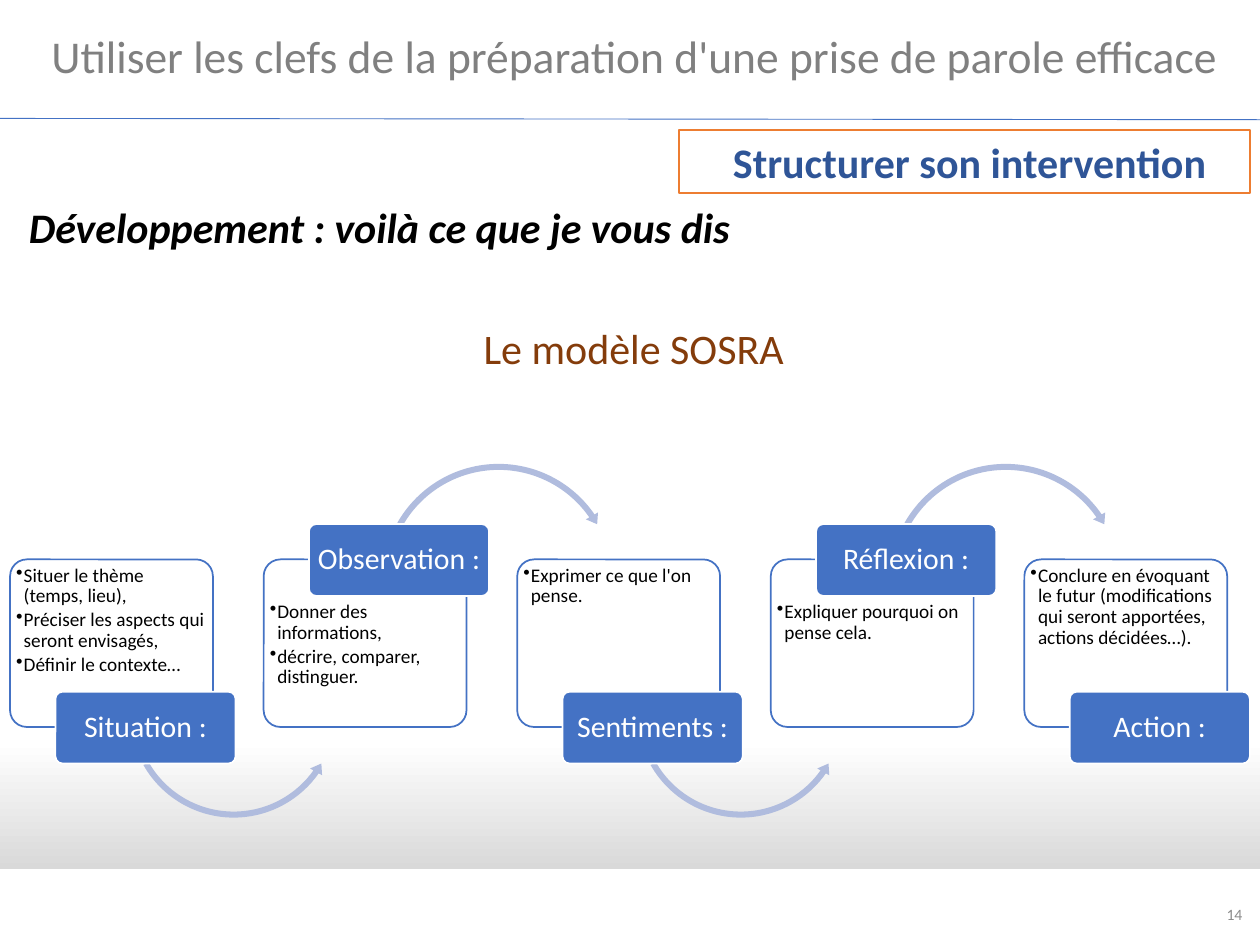
from lxml import etree
from pptx import Presentation
from pptx.dml.color import RGBColor
from pptx.enum.shapes import MSO_CONNECTOR, MSO_SHAPE
from pptx.enum.text import MSO_ANCHOR, MSO_AUTO_SIZE, PP_ALIGN
from pptx.oxml.ns import qn
from pptx.util import Inches, Pt

RECTANGLE, ROUNDED = MSO_SHAPE.RECTANGLE, MSO_SHAPE.ROUNDED_RECTANGLE
ARC_OVER, ARC_UNDER = MSO_SHAPE.CIRCULAR_ARROW, MSO_SHAPE.LEFT_CIRCULAR_ARROW
STRAIGHT = MSO_CONNECTOR.STRAIGHT
TOP, MIDDLE = MSO_ANCHOR.TOP, MSO_ANCHOR.MIDDLE
LEFT, CENTER, RIGHT = PP_ALIGN.LEFT, PP_ALIGN.CENTER, PP_ALIGN.RIGHT
NO_AUTOFIT = MSO_AUTO_SIZE.NONE

STEPS = [
    ("Situation :", ["Situer le thème (temps, lieu),",
                     "Préciser les aspects qui seront envisagés,",
                     "Définir le contexte…"]),
    ("Observation :", ["Donner des informations,", "décrire, comparer, distinguer."]),
    ("Sentiments :", ["Exprimer ce que l'on pense."]),
    ("Réflexion :", ["Expliquer pourquoi on pense cela."]),
    ("Action :", ["Conclure en évoquant le futur (modifications qui seront "
                  "apportées, actions décidées…)."]),
]
FIRST_LEFT, LAST_LEFT = 0.08, 8.13
PITCH = (LAST_LEFT - FIRST_LEFT) / (len(STEPS) - 1)


def color(value):
    return RGBColor.from_string(value)


def place(shape, left, top, width, height):
    shape.left, shape.top = Inches(left), Inches(top)
    shape.width, shape.height = Inches(width), Inches(height)


def set_bullet(para, mark=None, indent=0):
    properties = para._p.get_or_add_pPr()
    properties.set("marL", str(Inches(indent)))
    properties.set("indent", str(-Inches(indent)))
    if mark:
        etree.SubElement(properties, qn("a:buChar")).set("char", mark)
    else:
        etree.SubElement(properties, qn("a:buNone"))


def write(para, text, size=24, ink="000000", bold=False, italic=False, align=LEFT,
          before=0, after=0, spacing=1.0, mark=None, indent=0):
    set_bullet(para, mark, indent)
    para.alignment = align
    para.space_before, para.space_after = Pt(before), Pt(after)
    para.line_spacing = spacing
    span = para.add_run()
    span.text = text
    font = span.font
    font.name, font.size = "Calibri", Pt(size)
    font.bold, font.italic = bold, italic
    font.color.rgb = color(ink)


class SlideBuilder:
    blue, arc_blue, orange = "4472C4", "B0BCDE", "ED7D31"
    dark_blue, brown, gray, light_gray = "2F5597", "843C0B", "808080", "8C8C8C"
    white, shade = "FFFFFF", "D9D9D9"

    def __init__(self, page):
        self.page = page

    def frame(self, shape, anchor=TOP, insets=(0.1, 0.05, 0.1, 0.05)):
        frame = shape.text_frame
        frame.word_wrap = True
        frame.auto_size = NO_AUTOFIT
        frame.vertical_anchor = anchor
        (frame.margin_left, frame.margin_top,
         frame.margin_right, frame.margin_bottom) = map(Inches, insets)
        return frame

    def shape(self, kind, left, top, width, height, fill=None, line=None, adjust=()):
        shape = self.page.shapes.add_shape(
            kind, Inches(left), Inches(top), Inches(width), Inches(height))
        shape.shadow.inherit = False
        if fill:
            shape.fill.solid()
            shape.fill.fore_color.rgb = color(fill)
        if line:
            shape.line.color.rgb = color(line)
            shape.line.width = Pt(1)
        else:
            shape.line.fill.background()
        for index, value in enumerate(adjust):
            shape.adjustments[index] = value
        return shape

    def band(self, left, top, width, height):
        fill = self.shape(RECTANGLE, left, top, width, height).fill
        fill.gradient()
        fill.gradient_angle = 270
        stops = ((0.61, self.white), (1, self.shade))
        for stop, (position, tint) in zip(fill.gradient_stops, stops):
            stop.position = position
            stop.color.rgb = color(tint)

    def title(self, text):
        title = self.page.shapes.title
        place(title, 0.08, 0.17, 9.92, 0.54)
        write(self.frame(title, MIDDLE).paragraphs[0], text, size=26,
              ink=self.gray, align=CENTER)

    def body(self, heading, model):
        body = self.page.placeholders[1]
        place(body, 0.13, 1.55, 9.8, 1.48)
        frame = self.frame(body)
        write(frame.paragraphs[0], heading, bold=True, italic=True)
        write(frame.add_paragraph(), model, ink=self.brown, align=CENTER, before=40)

    def rule(self, left, top, right, bottom):
        line = self.page.shapes.add_connector(
            STRAIGHT, Inches(left), Inches(top), Inches(right), Inches(bottom))
        line.line.color.rgb = color(self.blue)
        line.line.width = Pt(0.5)
        etree.SubElement(line._element.spPr, qn("a:effectLst"))

    def section(self, text):
        box = self.shape(RECTANGLE, 5.39, 1.03, 4.53, 0.5, self.white, self.orange)
        frame = self.frame(box, MIDDLE, (0.18, 0.05, 0.1, 0.05))
        write(frame.paragraphs[0], text, ink=self.dark_blue, bold=True, align=CENTER)

    def number(self, text):
        box = self.page.shapes.add_textbox(
            Inches(7.63), Inches(7.06), Inches(2.33), Inches(0.4))
        write(self.frame(box, MIDDLE).paragraphs[0], text, size=9,
              ink=self.light_gray, align=RIGHT)

    def card(self, left, items, text_top):
        card = self.shape(ROUNDED, left, 4.44, 1.61, 1.33, self.white, self.blue, [0.1])
        frame = self.frame(card, TOP, (0.01, text_top, 0.01, 0.01))
        for index, item in enumerate(items):
            para = frame.add_paragraph() if index else frame.paragraphs[0]
            write(para, item, size=11, after=1.65, spacing=0.9, mark="•", indent=0.06)

    def arc(self, left, over):
        if over:
            self.shape(ARC_OVER, left + 0.91, 3.65, 1.91, 1.91, self.arc_blue,
                       adjust=[0.025, 2.982, 195.263, 125.755, 0.029])
        else:
            self.shape(ARC_UNDER, left + 0.92, 4.81, 1.71, 1.71, self.arc_blue,
                       adjust=[0.028, 3.364, 21.119, 90.245, 0.032])

    def label(self, left, top, text):
        label = self.shape(ROUNDED, left, top, 1.43, 0.57, self.blue, self.white, [0.1])
        frame = self.frame(label, MIDDLE, (0.04, 0.02, 0.04, 0.02))
        write(frame.paragraphs[0], text, size=17, ink=self.white,
              align=CENTER, spacing=0.9)

    def step(self, index, name, items):
        left = FIRST_LEFT + index * PITCH
        raised = index % 2 == 1
        self.card(left, items, 0.3 if raised else 0.01)
        if index < len(STEPS) - 1:
            self.arc(left, raised)
        self.label(left + 0.36, 4.16 if raised else 5.49, name)


def main():
    deck = Presentation()
    deck.slide_width, deck.slide_height = Inches(10), Inches(7.5)
    builder = SlideBuilder(deck.slides.add_slide(deck.slide_layouts[1]))
    builder.band(0, 4.3, 10, 2.6)
    builder.title("Utiliser les clefs de la préparation d'une prise de parole efficace")
    builder.rule(0, 0.94, 10, 0.95)
    builder.number("14")
    builder.body("Développement : voilà ce que je vous dis", "Le modèle SOSRA")
    builder.section("Structurer son intervention")
    for index, (name, items) in enumerate(STEPS):
        builder.step(index, name, items)
    deck.save("out.pptx")


if __name__ == "__main__":
    main()
